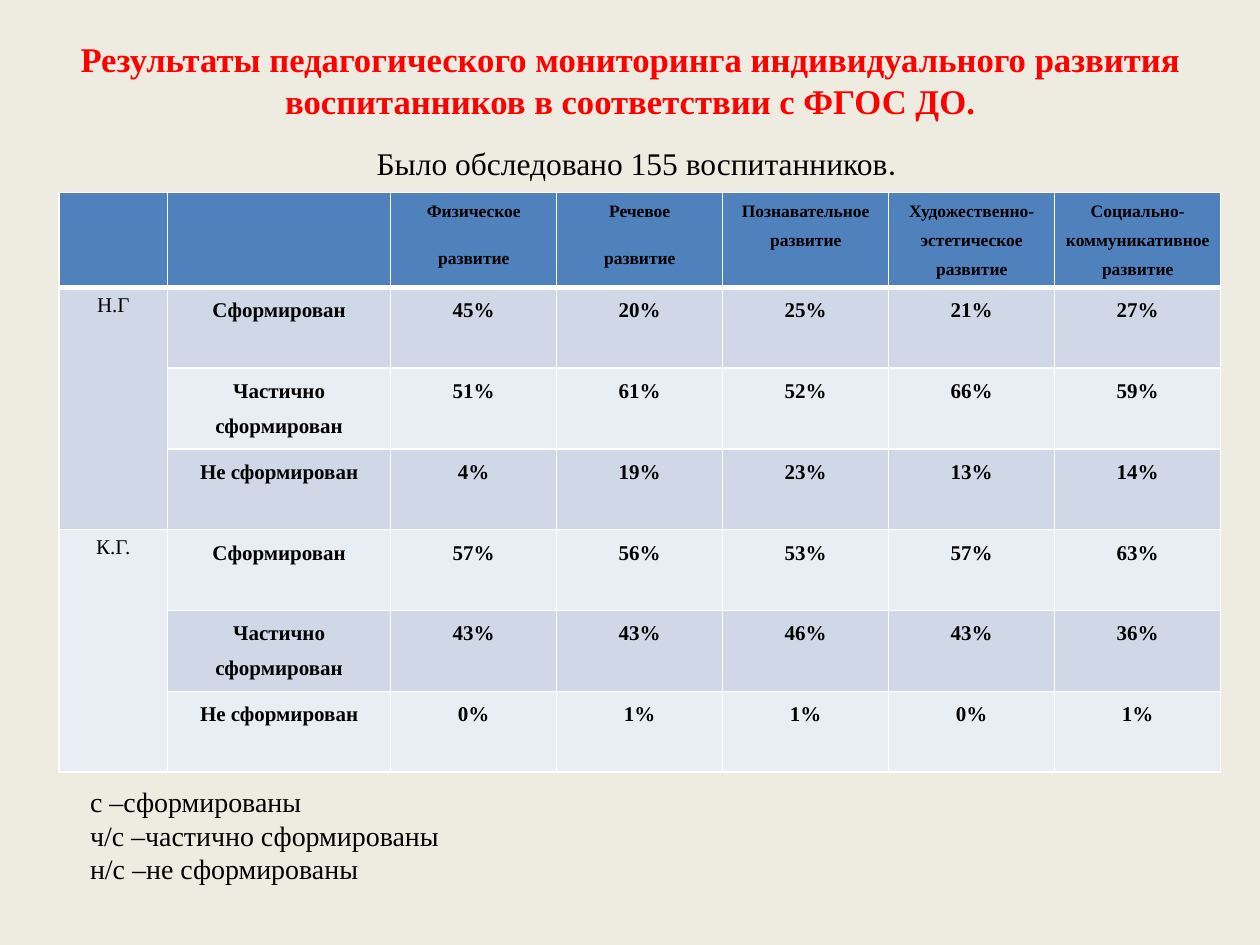
import pptx
import pptx.util
import pptx.dml.color
import pptx.enum.text
import pptx.oxml
import pptx.oxml.ns

Pt = pptx.util.Pt
RGB = pptx.dml.color.RGBColor
ALIGN = pptx.enum.text.PP_ALIGN
ANCHOR = pptx.enum.text.MSO_ANCHOR

CREAM = RGB(0xEE, 0xEC, 0xE1)
RED = RGB(0xFF, 0x00, 0x00)
BLACK = RGB(0x00, 0x00, 0x00)
WHITE = RGB(0xFF, 0xFF, 0xFF)
BLUE = RGB(0x4F, 0x81, 0xBD)
BANDS = [RGB(0xE9, 0xED, 0xF4), RGB(0xD0, 0xD8, 0xE8)]

SERIF = "Times New Roman"
HEADS = [
    "", "", "Физическое\nразвитие", "Речевое\nразвитие",
    "Познавательное развитие", "Художественно-эстетическое развитие",
    "Социально-коммуникативное развитие",
]
LEVELS = ["Сформирован", "Частично сформирован", "Не сформирован"]
GROUPS = {
    "Н.Г": [[45, 20, 25, 21, 27], [51, 61, 52, 66, 59], [4, 19, 23, 13, 14]],
    "К.Г.": [[57, 56, 53, 57, 63], [43, 43, 46, 43, 36], [0, 1, 1, 0, 1]],
}
LEGEND = "с –сформированы\nч/с –частично сформированы\nн/с –не сформированы"

BODY = {"alignment": ALIGN.CENTER, "line_spacing": 1.5, "space_after": Pt(10)}
INSETS = {
    "margin_left": Pt(5), "margin_right": Pt(5),
    "margin_top": 0, "margin_bottom": 0,
}


def apply(obj, form):
    for name, value in form.items():
        setattr(obj, name, value)


def write(frame, text, size, para, bold=False, color=BLACK):
    frame.text = text
    for item in frame.paragraphs:
        apply(item, para)
        for run in item.runs:
            apply(run.font, {"name": SERIF, "size": Pt(size), "bold": bold})
            run.font.color.rgb = color


def edge(cell, widths):
    props = cell._tc.get_or_add_tcPr()
    for spot, (side, width) in enumerate(widths.items()):
        line = pptx.oxml.parse_xml(
            f'<a:{side} {pptx.oxml.ns.nsdecls("a")} w="{Pt(width)}">'
            f'<a:solidFill><a:srgbClr val="{WHITE}"/></a:solidFill></a:{side}>'
        )
        props.insert(spot, line)


def add_title(slide, box):
    title = slide.shapes.title
    apply(title, box)
    frame = title.text_frame
    text = ("Результаты педагогического мониторинга индивидуального развития "
            "воспитанников в соответствии с ФГОС ДО.")
    write(frame, text, 19.8, {"alignment": ALIGN.CENTER}, True, RED)
    apply(frame, {"vertical_anchor": ANCHOR.TOP, "margin_top": 0, "word_wrap": True})


def add_note(slide, box, text, size, para, anchor):
    note = slide.shapes.add_textbox(**box)
    frame = note.text_frame
    apply(frame, {"word_wrap": True, "vertical_anchor": anchor})
    write(frame, text, size, para)
    return frame


def add_count(slide, box):
    frame = add_note(slide, box, "Было обследовано 155 воспитанников", 18,
                     {"alignment": ALIGN.CENTER}, ANCHOR.TOP)
    dot = frame.paragraphs[0].add_run()
    dot.text = "."
    apply(dot.font, {"name": "Calibri", "size": Pt(18)})
    dot.font.color.rgb = BLACK


def add_grid(slide, box):
    rows = [HEADS]
    for group, lines in GROUPS.items():
        for spot, (level, line) in enumerate(zip(LEVELS, lines)):
            name = group if spot == 0 else ""
            rows.append([name, level] + [f"{value}%" for value in line])

    table = slide.shapes.add_table(len(rows), len(HEADS), **box).table
    first, second, head = Pt(62), Pt(127.5), Pt(54)
    rest = (box["width"] - first - second) // 5
    for col, width in zip(table.columns, [first, second] + [rest] * 5):
        col.width = width
    for spot, row in enumerate(table.rows):
        row.height = head if spot == 0 else (box["height"] - head) // 6

    for r, texts in enumerate(rows):
        for c, text in enumerate(texts):
            cell = table.cell(r, c)
            cell.fill.solid()
            cell.fill.fore_color.rgb = BANDS[r % 2] if r else BLUE
            edge(cell, {"lnL": 1, "lnR": 1, "lnT": 1 if r != 1 else 3,
                        "lnB": 1 if r else 3})
            if c:
                apply(cell, INSETS)
            if text:
                para = BODY if c else {"alignment": ALIGN.CENTER}
                write(cell.text_frame, text, 12 if r else 10, para, c > 0)

    for top in range(1, len(rows), len(LEVELS)):
        table.cell(top, 0).merge(table.cell(top + len(LEVELS) - 1, 0))


def frame_box(left, top, width, height):
    return {"left": Pt(left), "top": Pt(top),
            "width": Pt(width), "height": Pt(height)}


def main():
    deck = pptx.Presentation()
    apply(deck, {"slide_width": Pt(720), "slide_height": Pt(540)})
    slide = deck.slides.add_slide(deck.slide_layouts[5])
    slide.background.fill.solid()
    slide.background.fill.fore_color.rgb = CREAM

    add_title(slide, frame_box(36, 21.6, 648, 56))
    add_count(slide, frame_box(39.6, 79, 648, 30))
    add_grid(slide, frame_box(33.8, 110, 663.8, 331.2))
    add_note(slide, frame_box(44.4, 444.4, 618.5, 65.5), LEGEND, 16,
             {"alignment": ALIGN.LEFT}, ANCHOR.MIDDLE)
    deck.save("out.pptx")


if __name__ == "__main__":
    main()
